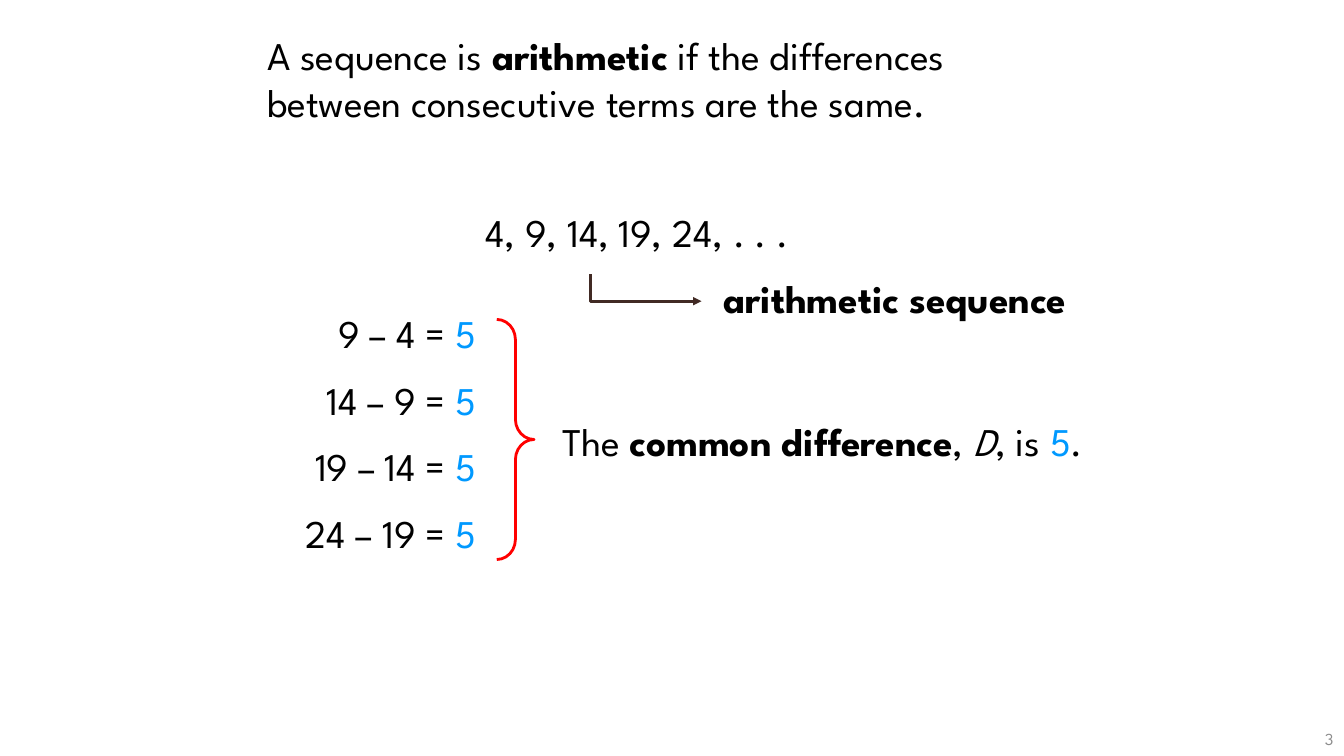
from dataclasses import dataclass

from lxml.etree import SubElement
from pptx import Presentation
from pptx.dml.color import RGBColor as RGB
from pptx.enum.shapes import MSO_SHAPE as SHAPE
from pptx.enum.text import MSO_ANCHOR as ANCHOR, MSO_AUTO_SIZE as AUTO, PP_ALIGN as ALIGN
from pptx.oxml.ns import qn
from pptx.util import Cm, Pt


@dataclass(frozen=True)
class Theme:
    font: str = "League Spartan"
    text: RGB = RGB(0x00, 0x00, 0x00)
    accent: RGB = RGB(0x00, 0x99, 0xFF)
    brace: RGB = RGB(0xFF, 0x00, 0x00)
    arrow: RGB = RGB(0x41, 0x2A, 0x24)
    muted: RGB = RGB(0x8C, 0x8C, 0x8C)
    body: Pt = Pt(28)
    small: Pt = Pt(12)
    gap: Pt = Pt(14)
    line: Pt = Pt(2)


class Deck:
    def __init__(self, prs, theme):
        self.theme = theme
        self.s = prs.slides.add_slide(prs.slide_layouts[5])

    def set_text(self, sp, paragraphs, align=ALIGN.LEFT, anchor=ANCHOR.TOP, size=None, color=None):
        t = self.theme
        tf = sp.text_frame
        tf.word_wrap = True
        tf.auto_size = AUTO.NONE
        tf.vertical_anchor = anchor
        for i, runs in enumerate(paragraphs):
            p = tf.add_paragraph() if i else tf.paragraphs[0]
            p.alignment = align
            p.space_before = t.gap if i else Pt(0)
            p.font.name = t.font
            p.font.size = size or t.body
            p.font.color.rgb = color or t.text
            for text, style in runs:
                r = p.add_run()
                r.text = text
                if style == "bold":
                    r.font.bold = True
                elif style == "italic":
                    r.font.italic = True
                elif style == "accent":
                    r.font.color.rgb = t.accent

    def title(self, box, runs):
        sp = self.s.shapes.title
        sp.left, sp.top, sp.width, sp.height = map(Cm, box)
        self.set_text(sp, [runs])

    def text(self, box, paragraphs, **style):
        self.set_text(self.s.shapes.add_textbox(*map(Cm, box)), paragraphs, **style)

    def outline(self, sp, color):
        sp.shadow.inherit = False
        sp.fill.background()
        sp.line.color.rgb = color
        sp.line.width = self.theme.line

    def brace(self, box, curl):
        sp = self.s.shapes.add_shape(SHAPE.RIGHT_BRACE, *map(Cm, box))
        sp.adjustments[0] = curl
        self.outline(sp, self.theme.brace)

    def elbow_arrow(self, start, end):
        (x1, y1), (x2, y2) = [map(Cm, point) for point in (start, end)]
        builder = self.s.shapes.build_freeform(x1, y1)
        builder.add_line_segments([(x1, y2), (x2, y2)], close=False)
        sp = builder.convert_to_shape()
        self.outline(sp, self.theme.arrow)
        SubElement(sp.element.spPr.find(qn("a:ln")), qn("a:tailEnd"), type="triangle")


def main():
    prs = Presentation()
    prs.slide_width, prs.slide_height = Cm(33.87), Cm(19.05)
    theme = Theme()
    deck = Deck(prs, theme)
    terms = [4, 9, 14, 19, 24]
    step = str(terms[1] - terms[0])

    deck.title((6.48, 0.66, 20.93, 2.62), [
        ("A sequence is ", ""),
        ("arithmetic", "bold"),
        (" if the differences between consecutive terms are the same.", ""),
    ])
    sequence = ", ".join(map(str, terms)) + ", . . ."
    deck.text((11.99, 5.13, 10.62, 1.45), [[(sequence, "")]])
    deck.elbow_arrow((14.88, 6.91), (17.68, 7.59))
    deck.text((17.98, 6.78, 9.35, 1.45), [[("arithmetic sequence", "bold")]])

    differences = [[(f"{b} – {a} = ", ""), (step, "accent")] for a, b in zip(terms, terms[1:])]
    deck.text((6.58, 7.67, 5.66, 6.78), differences, align=ALIGN.RIGHT)
    deck.brace((12.52, 8.05, 0.94, 6.05), 0.54)
    deck.text((13.92, 10.39, 14.3, 2.64), [[
        ("The ", ""),
        ("common difference", "bold"),
        (", ", ""),
        ("D", "italic"),
        (", is ", ""),
        (step, "accent"),
        (".", ""),
    ]])
    deck.text((25.12, 18.21, 8.74, 0.84), [[("3", "")]], align=ALIGN.RIGHT,
              anchor=ANCHOR.MIDDLE, size=theme.small, color=theme.muted)
    prs.save("out.pptx")


if __name__ == "__main__":
    main()
